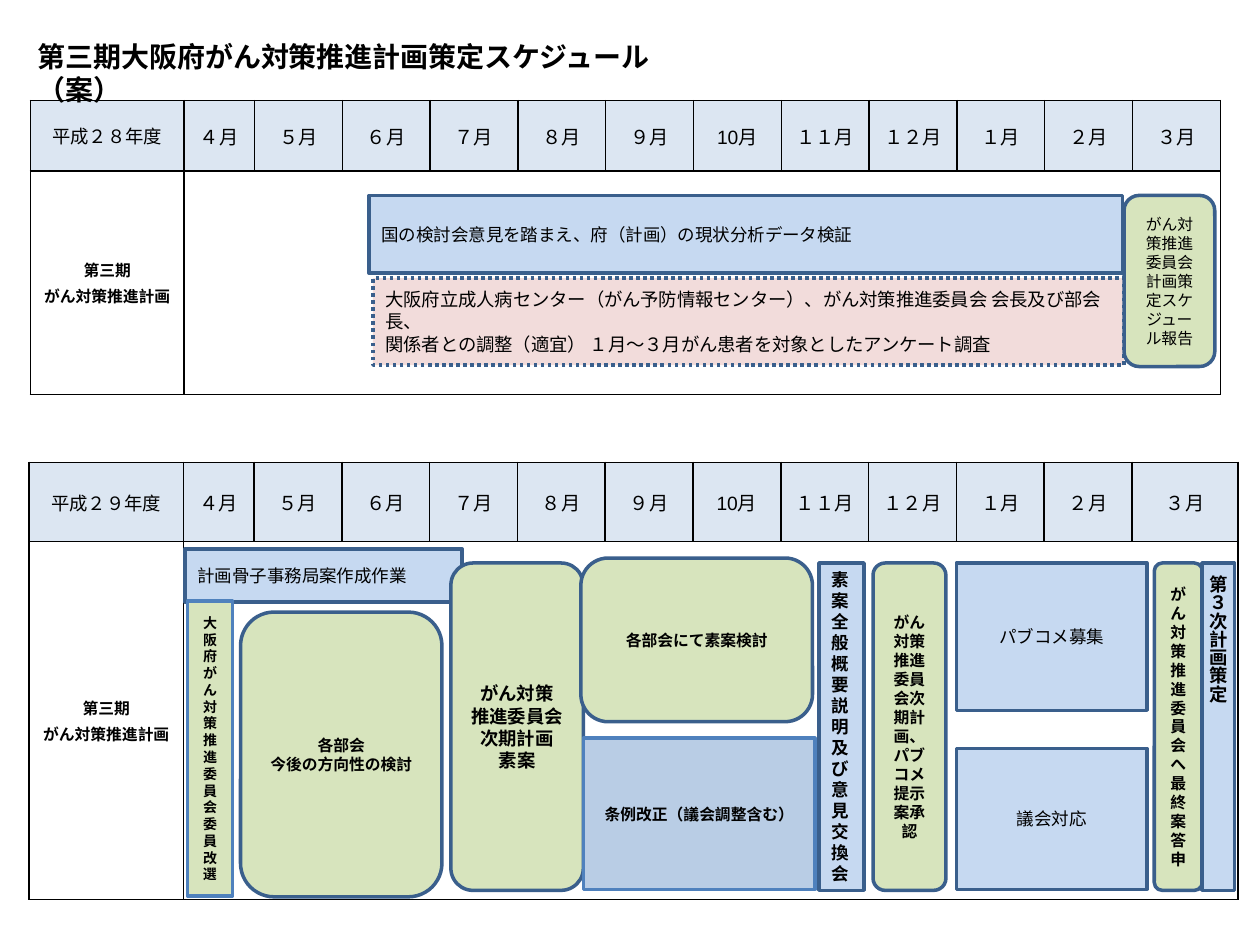
from lxml import etree
from pptx import Presentation
from pptx import util as u
from pptx.dml.color import RGBColor
from pptx.enum import dml, shapes, text
from pptx.oxml.ns import qn

COLORS = {
    "black": "000000", "header": "DCE6F2", "blue": "C6D9F1", "steel": "B9CDE5",
    "pink": "F2DCDB", "green": "D7E4BD", "edge": "3A5F8C", "bright": "4F81BD",
}
RECT = shapes.MSO_SHAPE.RECTANGLE
ROUND = shapes.MSO_SHAPE.ROUNDED_RECTANGLE
LEFT, CENTER = text.PP_ALIGN.LEFT, text.PP_ALIGN.CENTER
MONTHS = ["４月", "５月", "６月", "７月", "８月", "９月",
          "10月", "１１月", "１２月", "１月", "２月", "３月"]


def rgb(name):
    return RGBColor.from_string(COLORS[name])


def style_text(tf, size, bold, align, font="Calibri", before=0):
    for p in tf.paragraphs:
        p.alignment = align
        p.space_before = u.Pt(before)
        p.font.name = font
        p.font.size = u.Pt(size)
        p.font.bold = bold
        p.font.color.rgb = rgb("black")


prs = Presentation()
prs.slide_width, prs.slide_height = u.Cm(25.4), u.Cm(19.05)
s = prs.slides.add_slide(prs.slide_layouts[5])

# Year tables: year, left, top, column widths, row heights (cm)
years = [
    ("平成２８年度", 0.61, 2.03, [3.1, 1.42] + [1.77] * 11, [1.42, 4.5]),
    ("平成２９年度", 0.58, 9.32, [3.12, 1.42] + [1.77] * 10 + [2.14], [1.6, 7.21]),
]
for year, left, top, widths, heights in years:
    frame = s.shapes.add_table(2, len(widths), u.Cm(left), u.Cm(top),
                               u.Cm(sum(widths)), u.Cm(sum(heights)))
    table = frame.table
    table.first_row = table.horz_banding = False
    for column, width in zip(table.columns, widths):
        column.width = u.Cm(width)
    for row, height in zip(table.rows, heights):
        row.height = u.Cm(height)

    for i, label in enumerate([year] + MONTHS):
        cell = table.cell(0, i)
        cell.text = label
        style_text(cell.text_frame, 11 if i else 10.5, False, CENTER, "Arial", 2)
    plan = table.cell(1, 0)
    plan.text = "第三期\nがん対策推進計画"
    style_text(plan.text_frame, 9, True, CENTER, "Noto Sans CJK JP", 2)
    table.cell(1, 1).merge(table.cell(1, len(widths) - 1))

    # Fill and black borders of every cell
    for r, row in enumerate(table.rows):
        for cell in row.cells:
            cell.vertical_anchor = text.MSO_ANCHOR.MIDDLE
            if r == 0:
                cell.fill.solid()
                cell.fill.fore_color.rgb = rgb("header")
            else:
                cell.fill.background()
            tc_pr = cell._tc.get_or_add_tcPr()
            for i, side in enumerate(["a:lnL", "a:lnR", "a:lnT", "a:lnB"]):
                ln = etree.Element(qn(side), w=str(u.Pt(1)))
                fill = etree.SubElement(ln, qn("a:solidFill"))
                etree.SubElement(fill, qn("a:srgbClr"), val=COLORS["black"])
                tc_pr.insert(i, ln)

# Title, in front of the tables
title = s.shapes.title
title.left, title.top, title.width, title.height = map(u.Cm, (0.51, 0.66, 13.2, 0.94))
tf = title.text_frame
tf.text = "第三期大阪府がん対策推進計画策定スケジュール（案）"
tf.word_wrap = True
tf.auto_size = text.MSO_AUTO_SIZE.NONE
tf.vertical_anchor = text.MSO_ANCHOR.TOP
style_text(tf, 16, True, LEFT, "Times New Roman")
title.element.getparent().append(title.element)

# Activities: shape, left, top, width, height (cm), fill, line, size, bold, align, text
activities = [
    # First year
    (RECT, 7.44, 3.94, 15.19, 1.57, "blue", "edge", 10, False, LEFT,
     "国の検討会意見を踏まえ、府（計画）の現状分析データ検証"),
    (RECT, 7.52, 5.61, 15.14, 1.75, "pink", "edge", 10.5, False, LEFT,
     "大阪府立成人病センター（がん予防情報センター）、がん対策推進委員会 会長及び部会長、\n"
     "関係者との調整（適宜） １月～３月がん患者を対象としたアンケート調査"),
    (ROUND, 22.66, 3.94, 1.83, 3.45, "green", "edge", 9, False, CENTER,
     "がん対策推進委員会\n計画策定スケジュール報告"),
    # Second year
    (RECT, 3.73, 11.07, 5.59, 1.07, "blue", "edge", 10, False, LEFT,
     "計画骨子事務局案作成作業"),
    (ROUND, 9.09, 11.35, 2.67, 6.6, "green", "edge", 10.5, True, CENTER,
     "がん対策\n推進委員会\n次期計画\n素案"),
    (RECT, 19.28, 11.35, 3.84, 2.97, "blue", "edge", 10, False, CENTER, "パブコメ募集"),
    (RECT, 16.51, 11.35, 0.91, 6.6, "blue", "edge", 10, True, LEFT,
     "素案全般概要説明及び意見交換会"),
    (RECT, 19.28, 15.09, 3.84, 2.84, "blue", "edge", 10, False, CENTER, "議会対応"),
    (ROUND, 23.27, 11.35, 0.97, 6.6, "green", "edge", 9, True, CENTER,
     "がん対策推進委員会へ最終案答申"),
    (RECT, 24.23, 11.35, 0.66, 6.6, "blue", "edge", 10.5, True, CENTER, "第３次計画策定"),
    (ROUND, 17.6, 11.35, 1.47, 6.6, "green", "edge", 9, True, CENTER,
     "がん対策推進委員会次期計画、パブコメ提示案承認"),
    (ROUND, 4.85, 12.34, 4.06, 5.74, "green", "edge", 9, True, CENTER,
     "各部会\n今後の方向性の検討"),
    (ROUND, 11.71, 11.25, 4.67, 3.3, "green", "edge", 9, True, CENTER, "各部会にて素案検討"),
    (RECT, 11.76, 14.88, 4.67, 3.05, "steel", "bright", 9, True, CENTER,
     "条例改正（議会調整含む）"),
    (RECT, 3.78, 12.12, 0.91, 5.94, "green", "bright", 8, True, CENTER,
     "大阪府がん対策推進委員会委員改選"),
]
for kind, left, top, width, height, fill, line, size, bold, align, label in activities:
    sp = s.shapes.add_shape(kind, *map(u.Cm, (left, top, width, height)))
    sp.shadow.inherit = False
    sp.fill.solid()
    sp.fill.fore_color.rgb = rgb(fill)
    sp.line.color.rgb = rgb(line)
    sp.line.width = u.Pt(2)
    if fill == "pink":
        sp.line.dash_style = dml.MSO_LINE.ROUND_DOT
    tf = sp.text_frame
    tf.text = label
    tf.word_wrap = True
    tf.vertical_anchor = text.MSO_ANCHOR.MIDDLE
    style_text(tf, size, bold, align)
    if label == "第３次計画策定":
        tf._txBody.bodyPr.set("vert", "eaVert")

prs.save("out.pptx")
